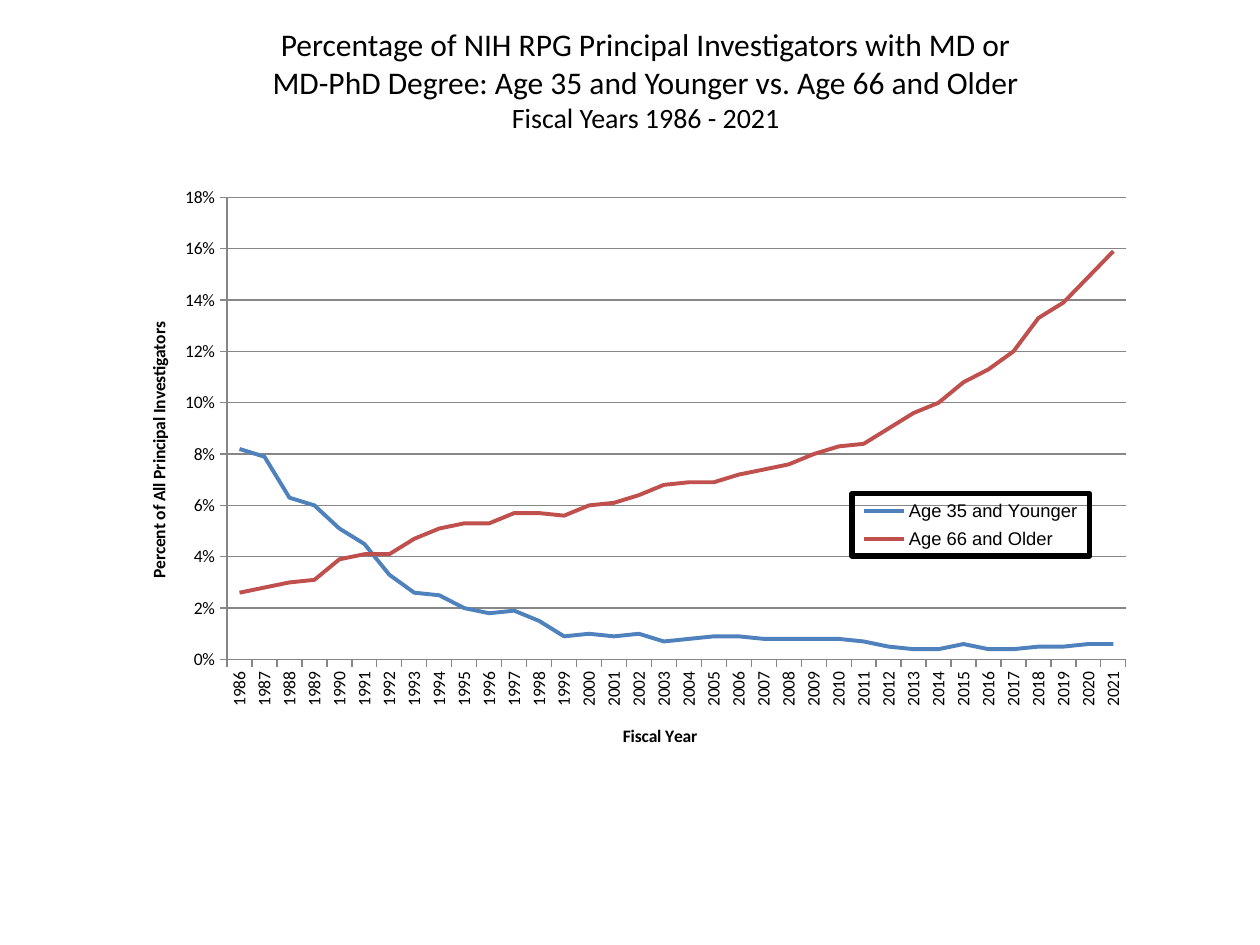
from lxml import etree
from pptx import Presentation
from pptx import util as u
from pptx.chart.data import CategoryChartData
from pptx.dml.color import RGBColor
from pptx.enum import chart as charts, text
from pptx.oxml.ns import qn

YEARS = [str(year) for year in range(1986, 2022)]
# Shares of all principal investigators, in percent
YOUNGER = [8.2, 7.9, 6.3, 6, 5.1, 4.5, 3.3, 2.6, 2.5, 2, 1.8, 1.9,
           1.5, 0.9, 1, 0.9, 1, 0.7, 0.8, 0.9, 0.9, 0.8, 0.8, 0.8,
           0.8, 0.7, 0.5, 0.4, 0.4, 0.6, 0.4, 0.4, 0.5, 0.5, 0.6, 0.6]
OLDER = [2.6, 2.8, 3, 3.1, 3.9, 4.1, 4.1, 4.7, 5.1, 5.3, 5.3, 5.7,
         5.7, 5.6, 6, 6.1, 6.4, 6.8, 6.9, 6.9, 7.2, 7.4, 7.6, 8,
         8.3, 8.4, 9, 9.6, 10, 10.8, 11.3, 12, 13.3, 13.9, 14.9, 15.9]
SERIES = [("Age 35 and Younger", YOUNGER, "4F81BD"),
          ("Age 66 and Older", OLDER, "C0504D")]


def color(hex_code):
    return RGBColor.from_string(hex_code)


def style_font(font, size, name="Calibri", bold=False, ink="000000"):
    font.size, font.name, font.bold = u.Pt(size), name, bold
    font.color.rgb = color(ink)


def add_span(para, words, **style):
    span = para.add_run()
    span.text = words
    style_font(span.font, **style)


def style_line(line, ink, width):
    line.color.rgb = color(ink)
    line.width = u.Pt(width)


def place_part(part, inner=False, **shares):
    """Set the manual layout of a chart part, in shares of the chart's size."""
    for old in part.findall(qn("c:layout")):
        part.remove(old)
    layout = etree.Element(qn("c:layout"))
    manual = etree.SubElement(layout, qn("c:manualLayout"))
    settings = {"layoutTarget": "inner"} if inner else {}
    settings.update(xMode="edge", yMode="edge", **shares)
    for tag, value in settings.items():
        etree.SubElement(manual, qn(f"c:{tag}")).set("val", str(value))
    overlay = part.find(qn("c:overlay"))
    part.insert(0 if overlay is None else part.index(overlay), layout)


def frame_legend(legend, ink, width):
    frame = etree.Element(qn("c:spPr"))
    line = etree.SubElement(frame, qn("a:ln"), w=str(u.Pt(width)))
    fill = etree.SubElement(line, qn("a:solidFill"))
    etree.SubElement(fill, qn("a:srgbClr"), val=ink)
    legend._element.find(qn("c:overlay")).addnext(frame)


class Page:
    GREY = "868686"

    def __init__(self, deck):
        self.deck = deck
        self.slide = deck.slides.add_slide(deck.slide_layouts[5])

    def area(self, left, top, width, height):
        """Turn shares of the slide's size into lengths."""
        wide, high = self.deck.slide_width, self.deck.slide_height
        return [int(share * side) for share, side in
                zip((left, top, width, height), (wide, high, wide, high))]

    def title(self, heading, subheading, area):
        box = self.slide.shapes.title
        box.left, box.top, box.width, box.height = self.area(*area)
        frame = box.text_frame
        frame.word_wrap = True
        frame.auto_size = text.MSO_AUTO_SIZE.NONE
        frame.vertical_anchor = text.MSO_ANCHOR.TOP
        para = frame.paragraphs[0]
        para.alignment = text.PP_ALIGN.CENTER
        add_span(para, heading, size=18)
        para.add_line_break()
        add_span(para, subheading, size=16)

    def axis(self, axis, name, left, top):
        para = axis.axis_title.text_frame.paragraphs[0]
        add_span(para, name, size=10, bold=True)
        place_part(axis.axis_title._element, x=left, y=top)
        axis.major_tick_mark = charts.XL_TICK_MARK.OUTSIDE
        axis.minor_tick_mark = charts.XL_TICK_MARK.NONE
        style_line(axis.format.line, self.GREY, 0.75)
        style_font(axis.tick_labels.font, 10)

    def line_chart(self, area):
        data = CategoryChartData(number_format="0.0%")
        data.categories = YEARS
        for name, percents, _ in SERIES:
            data.add_series(name, [round(p / 100, 3) for p in percents])
        chart = self.slide.shapes.add_chart(
            charts.XL_CHART_TYPE.LINE, *self.area(*area), data).chart
        chart.has_title = False
        style_font(chart.font, 10)
        plot = chart.plots[0]
        plot.vary_by_categories = False
        for series, (_, _, ink) in zip(plot.series, SERIES):
            series.smooth = False
            series.marker.style = charts.XL_MARKER_STYLE.NONE
            style_line(series.format.line, ink, 2.25)

        years, shares = chart.category_axis, chart.value_axis
        self.axis(years, "Fiscal Year", 0.49, 0.92)
        years._element.txPr.find(qn("a:bodyPr")).set("rot", "-5400000")
        self.axis(shares, "Percent of All Principal Investigators", 0.03, 0.24)
        shares.minimum_scale, shares.maximum_scale = 0, 0.18
        shares.major_unit = 0.02
        shares.tick_labels.number_format = "0%"
        shares.tick_labels.number_format_is_linked = False
        style_line(shares.major_gridlines.format.line, self.GREY, 0.75)
        place_part(chart._chartSpace.chart.plotArea, inner=True,
                   x=0.11, y=0.035, w=0.87, h=0.78)

        chart.has_legend = True
        legend = chart.legend
        legend.position = charts.XL_LEGEND_POSITION.RIGHT
        legend.include_in_layout = True
        style_font(legend.font, 10.5, name="Arial")
        place_part(legend._element, x=0.715, y=0.535, w=0.23, h=0.105)
        frame_legend(legend, "000000", 3)


def main():
    deck = Presentation()
    deck.slide_width, deck.slide_height = u.Inches(10), u.Inches(7.5)
    page = Page(deck)
    page.title("Percentage of NIH RPG Principal Investigators with MD or "
               "MD-PhD Degree: Age 35 and Younger vs. Age 66 and Older",
               "Fiscal Years 1986 - 2021", (0.2, 0.02, 0.625, 0.13))
    page.line_chart((0.09, 0.187, 0.82, 0.627))
    deck.save("out.pptx")


if __name__ == "__main__":
    main()
